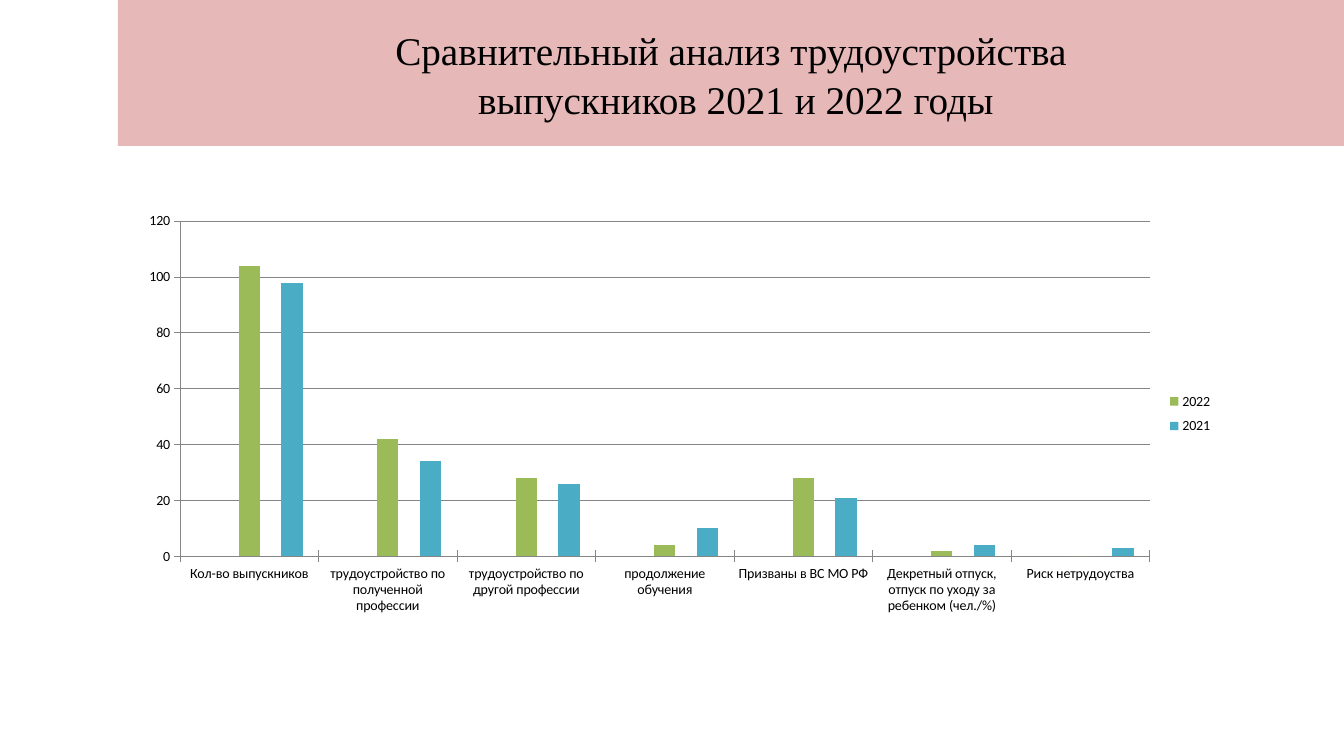
from dataclasses import dataclass

from lxml import etree
from pptx import Presentation
from pptx.chart.chart import Chart
from pptx.chart.data import CategoryChartData
from pptx.dml.color import RGBColor
from pptx.enum.chart import XL_CHART_TYPE, XL_LEGEND_POSITION, XL_TICK_MARK
from pptx.enum.shapes import MSO_SHAPE
from pptx.enum.text import MSO_ANCHOR, PP_ALIGN
from pptx.oxml.ns import qn
from pptx.slide import Slide
from pptx.util import Cm, Pt

CLUSTERED = XL_CHART_TYPE.COLUMN_CLUSTERED
LEGEND_RIGHT = XL_LEGEND_POSITION.RIGHT
TICK_CROSS = XL_TICK_MARK.CROSS
RECTANGLE = MSO_SHAPE.RECTANGLE
MIDDLE = MSO_ANCHOR.MIDDLE
CENTER = PP_ALIGN.CENTER

COLORS = {
    "text": "000000",
    "banner": "E6B9B8",
    "axis": "868686",
    "blue": "4F81BD",
    "red": "C0504D",
    "green": "9BBB59",
    "purple": "8064A2",
    "aqua": "4BACC6",
}
TITLE_LINES = ["Сравнительный анализ трудоустройства", " выпускников 2021 и 2022 годы"]
OUTCOMES = [
    "Кол-во выпускников",
    "трудоустройство по полученной профессии",
    "трудоустройство по другой профессии",
    "продолжение обучения",
    "Призваны в ВС МО РФ",
    "Декретный отпуск, отпуск по уходу за ребенком (чел./%)",
    "Риск нетрудоуства",
]


@dataclass(frozen=True)
class YearSeries:
    """One column slot per outcome; a slot without counts stays empty."""

    name: str
    color: str
    counts: tuple[int, ...] = ()


SERIES = [
    YearSeries("Series 1", "blue"),
    YearSeries("Series 2", "red"),
    YearSeries("2022", "green", (104, 42, 28, 4, 28, 2, 0)),
    YearSeries("Series 4", "purple"),
    YearSeries("2021", "aqua", (98, 34, 26, 10, 21, 4, 3)),
]


def rgb(color: str) -> RGBColor:
    return RGBColor.from_string(COLORS[color])


def write_text(frame, lines: list[str], *, font: str, size: float, color: str,
               line_spacing: float = 1.0) -> None:
    frame.word_wrap = True
    frame.vertical_anchor = MIDDLE
    paragraph = frame.paragraphs[0]
    paragraph.alignment = CENTER
    paragraph.line_spacing = line_spacing
    for index, line in enumerate(lines):
        if index:
            paragraph.add_line_break()
        run = paragraph.add_run()
        run.text = line
        run.font.name = font
        run.font.size = Pt(size)
        run.font.color.rgb = rgb(color)


def add_banner(slide: Slide) -> None:
    banner = slide.shapes.add_shape(RECTANGLE, Cm(2.97), Cm(0), Cm(30.9), Cm(3.68))
    banner.shadow.inherit = False
    banner.fill.solid()
    banner.fill.fore_color.rgb = rgb("banner")
    banner.line.fill.background()
    write_text(banner.text_frame, TITLE_LINES, font="Times New Roman", size=28,
               color="text", line_spacing=1.05)


def make_layout(x: float, y: float, w: float, h: float, inner: bool = False):
    """Manual chart layout in fractions of the chart area."""
    layout = etree.Element(qn("c:layout"))
    manual = etree.SubElement(layout, qn("c:manualLayout"))
    settings = [("layoutTarget", "inner")] if inner else []
    settings += [("xMode", "edge"), ("yMode", "edge"), ("x", x), ("y", y), ("w", w), ("h", h)]
    for tag, value in settings:
        etree.SubElement(manual, qn(f"c:{tag}")).set("val", str(value))
    return layout


def place_plot(chart: Chart) -> None:
    plot_area = chart._chartSpace.chart.plotArea
    for automatic in plot_area.findall(qn("c:layout")):
        plot_area.remove(automatic)
    plot_area.insert(0, make_layout(0.043, 0.035, 0.885, 0.749, inner=True))


def add_legend(chart: Chart) -> None:
    """Legend that lists only the series with counts."""
    chart.has_legend = True
    chart.legend.position = LEGEND_RIGHT
    chart.legend.include_in_layout = False
    legend = chart._chartSpace.chart.find(qn("c:legend"))
    for automatic in legend.findall(qn("c:layout")):
        legend.remove(automatic)
    position = legend.find(qn("c:legendPos"))
    position.addnext(make_layout(0.94, 0.4, 0.05, 0.13))
    for index in reversed(range(len(SERIES))):
        if not SERIES[index].counts:
            entry = etree.Element(qn("c:legendEntry"))
            etree.SubElement(entry, qn("c:idx")).set("val", str(index))
            etree.SubElement(entry, qn("c:delete")).set("val", "1")
            position.addnext(entry)


def add_employment_chart(slide: Slide) -> None:
    data = CategoryChartData()
    data.categories = OUTCOMES
    for series in SERIES:
        data.add_series(series.name, series.counts or [None] * len(OUTCOMES))
    chart = slide.shapes.add_chart(
        CLUSTERED, Cm(3.35), Cm(5.18), Cm(27.61), Cm(11.28), data).chart
    chart.has_title = False
    chart.font.name = "Calibri"
    chart.font.size = Pt(10)
    chart.font.color.rgb = rgb("text")

    plot = chart.plots[0]
    plot.gap_width = 150
    plot.overlap = 0
    plot.vary_by_categories = False
    for columns, series in zip(plot.series, SERIES):
        columns.format.fill.solid()
        columns.format.fill.fore_color.rgb = rgb(series.color)

    values = chart.value_axis
    values.minimum_scale, values.maximum_scale, values.major_unit = 0, 120, 20
    values.has_major_gridlines = True
    for axis in (chart.category_axis, values):
        axis.major_tick_mark = TICK_CROSS
    for lines in (chart.category_axis, values, values.major_gridlines):
        lines.format.line.color.rgb = rgb("axis")
        lines.format.line.width = Pt(0.75)
    place_plot(chart)
    add_legend(chart)


def main() -> None:
    presentation = Presentation()
    presentation.slide_width = Cm(33.87)
    presentation.slide_height = Cm(19.05)
    slide = presentation.slides.add_slide(presentation.slide_layouts[6])
    add_banner(slide)
    add_employment_chart(slide)
    presentation.save("out.pptx")


if __name__ == "__main__":
    main()
